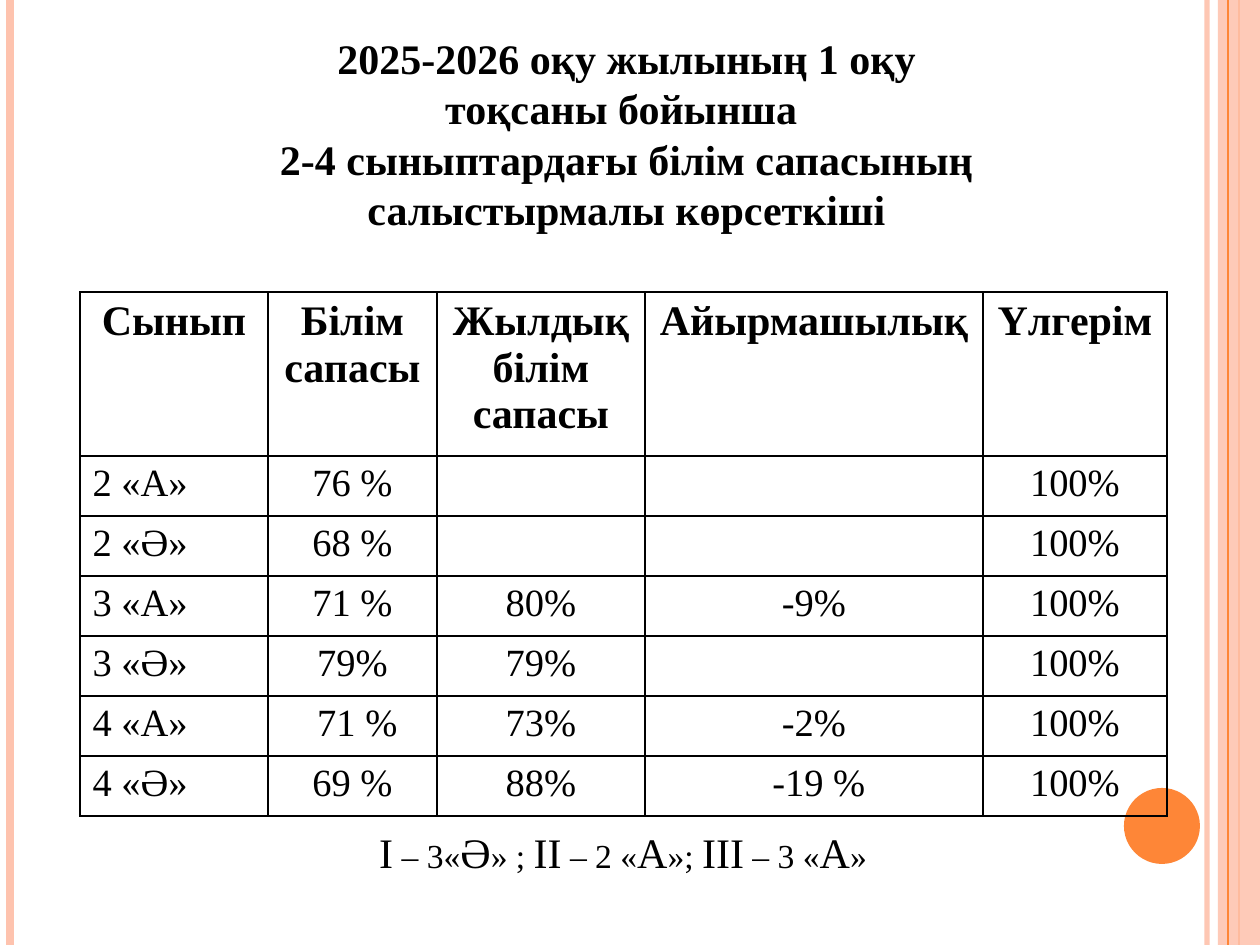
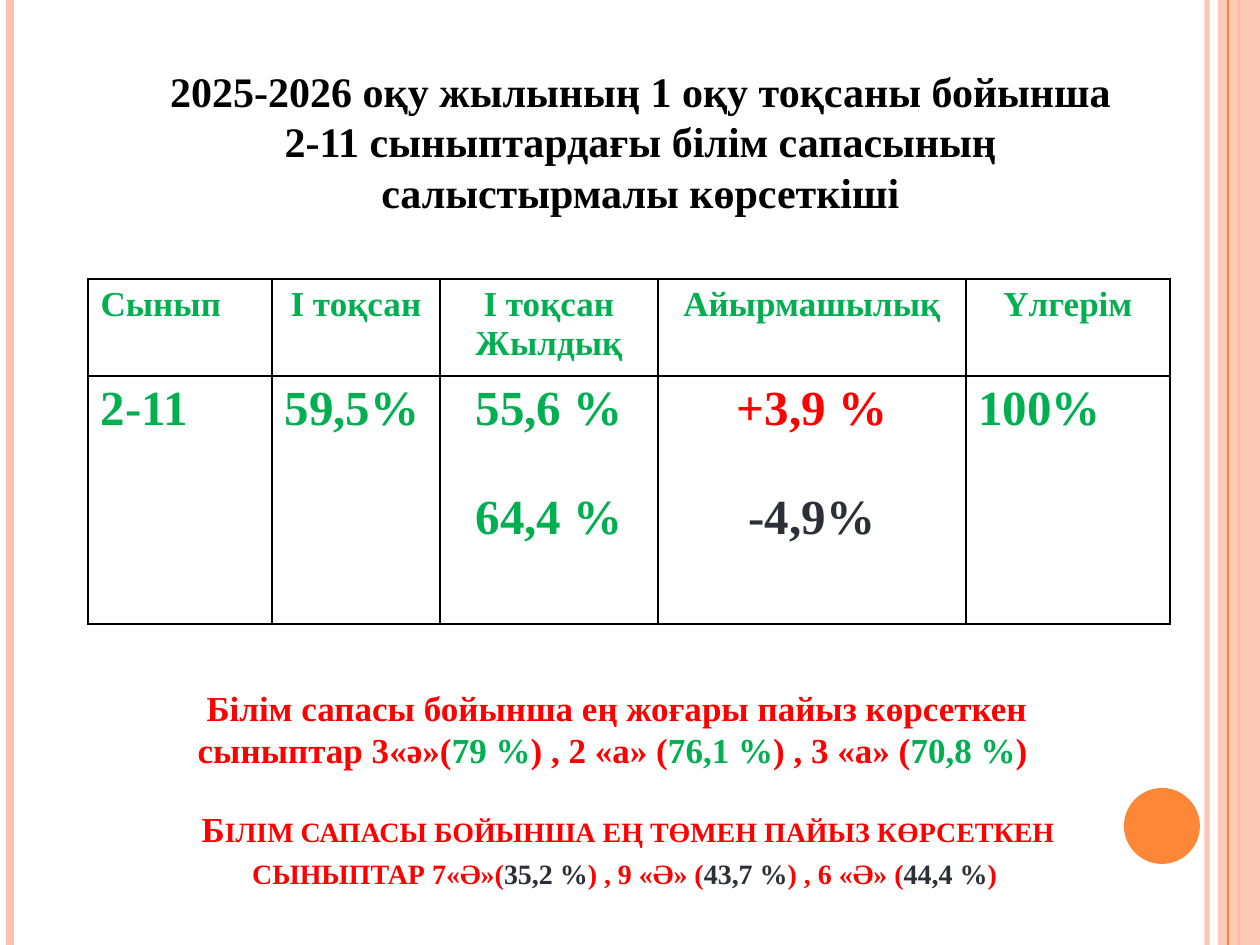
"""Build two slides comparing the quality of learning by class."""
from itertools import cycle

from pptx import Presentation, util as u
from pptx.dml.color import RGBColor
from pptx.enum import shapes, text
from pptx.oxml import parse_xml
from pptx.oxml.ns import nsdecls

EMU_PER_PX = 914400 / 126
PAGE_WIDTH, PAGE_HEIGHT = 1260, 945
FONT = "Times New Roman"
LEADING = 1.2
COLOURS = {
    "black": "000000",
    "green": "00B050",
    "red": "FF0000",
    "slate": "2B2F36",
    "peach": "FEC3AE",
    "orange": "FE8637",
}
BAND_LINES = [
    (1207, "peach", 3, 93),
    (10, "peach", 4.5, 100),
    (1239, "orange", 1.5, 100),
]
LEFT, CENTER = text.PP_ALIGN.LEFT, text.PP_ALIGN.CENTER


def px(*lengths):
    """Turn pixel lengths into a list of EMU."""
    return [u.Emu(round(length * EMU_PER_PX)) for length in lengths]


def rgb(name):
    """Look up a colour by name."""
    return RGBColor.from_string(COLOURS[name])


def apply(target, values):
    """Set every attribute in a dict of format values."""
    for name, value in values.items():
        setattr(target, name, value)


def set_opacity(shape, percent):
    """Make the explicit colours of a shape partly transparent."""
    for colour in shape.element.xpath(".//a:srgbClr"):
        colour.append(parse_xml(f'<a:alpha {nsdecls("a")} val="{percent * 1000}"/>'))


def add_band_line(page, x, colour, width, opacity):
    """Draw a vertical line over the full height of the page."""
    line = page.shapes.add_connector(
        shapes.MSO_CONNECTOR.STRAIGHT, *px(x, 0, x, PAGE_HEIGHT))
    line.line.width = u.Pt(width)
    line.line.color.rgb = rgb(colour)
    line.element.spPr.append(parse_xml(f'<a:effectLst {nsdecls("a")}/>'))
    if opacity < 100:
        set_opacity(line, opacity)


def add_plain_shape(page, kind, place, colour):
    """Add a filled shape without outline or shadow."""
    shape = page.shapes.add_shape(kind, *px(*place))
    shape.shadow.inherit = False
    shape.fill.solid()
    shape.fill.fore_color.rgb = rgb(colour)
    shape.line.fill.background()
    return shape


def add_decoration(page):
    """Draw the side bands and the disc shared by all pages."""
    for band in BAND_LINES:
        add_band_line(page, *band)
    strip = add_plain_shape(
        page, shapes.MSO_SHAPE.RECTANGLE, (1218, 0, 42, PAGE_HEIGHT), "peach")
    set_opacity(strip, 87)
    add_band_line(page, 1228, "orange", 0.75, 100)
    add_plain_shape(page, shapes.MSO_SHAPE.OVAL, (1124, 788, 76, 76), "orange")


def write(frame, paras, size, bold=False, align=CENTER, leading=None, gap=0,
          small_caps=False):
    """Fill a text frame with paragraphs made of (words, colour) spans."""
    for index, spans in enumerate(paras):
        para = frame.paragraphs[0] if index == 0 else frame.add_paragraph()
        apply(para, {"alignment": align, "space_after": u.Pt(0),
                     "space_before": u.Pt(gap if index else 0)})
        if leading:
            para.line_spacing = u.Pt(size * leading)
        for words, colour in spans:
            span = para.add_run()
            span.text = words
            apply(span.font, {"name": FONT, "size": u.Pt(size), "bold": bold})
            span.font.color.rgb = rgb(colour)
            if small_caps:
                span.font._element.set("cap", "small")


def format_box(box, anchor):
    """Give a text box its wrapping and anchor."""
    apply(box.text_frame, {"word_wrap": True, "vertical_anchor": anchor,
                           "auto_size": text.MSO_AUTO_SIZE.NONE})


def add_page(deck, place, title_lines):
    """Add a decorated page with its title."""
    page = deck.slides.add_slide(deck.slide_layouts[5])
    add_decoration(page)
    title = page.shapes.title
    apply(title, dict(zip(("left", "top", "width", "height"), px(*place))))
    format_box(title, text.MSO_ANCHOR.TOP)
    write(title.text_frame, [[(line, "black")] for line in title_lines],
          24, bold=True, leading=LEADING)
    return page


def add_note(page, place, spans, size, anchor=text.MSO_ANCHOR.BOTTOM, **style):
    """Add a one-paragraph note below the table."""
    box = page.shapes.add_textbox(*px(*place))
    format_box(box, anchor)
    write(box.text_frame, [spans], size, leading=LEADING, **style)


def alternate(pieces, highlight):
    """Colour pieces of a sentence in red and a highlight in turn."""
    return list(zip(pieces, cycle(("red", highlight))))


def add_grid(page, corner, widths, heights):
    """Add an unfilled table with thin black borders."""
    table = page.shapes.add_table(
        len(heights), len(widths), *px(*corner, sum(widths), sum(heights))).table
    apply(table, {"first_row": False, "horz_banding": False})
    for column, width in zip(table.columns, px(*widths)):
        column.width = width
    for row, height in zip(table.rows, px(*heights)):
        row.height = height
    for cell in table.iter_cells():
        properties = cell._tc.get_or_add_tcPr()
        for side in "LRTB":
            properties.append(parse_xml(
                f'<a:ln{side} {nsdecls("a")} w="12700"><a:solidFill>'
                f'<a:srgbClr val="{COLOURS["black"]}"/></a:solidFill></a:ln{side}>'))
        cell.fill.background()
    return table


def build_primary_page(deck):
    """Build the page for classes 2 to 4."""
    page = add_page(deck, (263, 26, 727, 217), [
        "2025-2026 оқу жылының 1 оқу тоқсаны бойынша ",
        "2-4 сыныптардағы білім сапасының салыстырмалы көрсеткіші"])
    headers = ["Сынып", "Білім сапасы", "Жылдық білім сапасы",
               "Айырмашылық", "Үлгерім"]
    results = [
        ("2 «А»", "76 %", "", ""),
        ("2 «Ә»", "68 %", "", ""),
        ("3 «А»", "71 %", "80%", "-9%"),
        ("3 «Ә»", "79%", "79%", ""),
        ("4 «А»", " 71 %", "73%", "-2%"),
        ("4 «Ә»", "69 %", "88%", " -19 %"),
    ]
    table = add_grid(page, (80, 292), [188, 169, 208, 338, 184],
                     [164] + [60] * len(results))
    for column, header in enumerate(headers):
        write(table.cell(0, column).text_frame, [[(header, "black")]], 24, bold=True)
    for row, result in enumerate(results, 1):
        for column, value in enumerate((*result, "100%")):
            if value:
                write(table.cell(row, column).text_frame, [[(value, "black")]], 22,
                      align=CENTER if column else LEFT)
    add_note(page, (103, 820, 1040, 63),
             [("I – 3«Ә» ; II – 2 «А»; ІII – 3 «А»", "black")], 24, small_caps=True)


def build_school_page(deck):
    """Build the page for classes 2 to 11."""
    page = add_page(deck, (154, 59, 973, 165), [
        "2025-2026 оқу жылының 1 оқу тоқсаны бойынша ",
        "2-11 сыныптардағы білім сапасының салыстырмалы көрсеткіші"])
    columns = [
        (["Сынып"], LEFT, [("2-11", "green")], LEFT),
        (["І тоқсан"], CENTER, [("59,5%", "green")], LEFT),
        (["І тоқсан", "Жылдық"], CENTER,
         [("55,6 %", "green"), ("64,4 %", "green")], CENTER),
        (["Айырмашылық"], CENTER,
         [("+3,9 %", "red"), ("-4,9%", "slate")], CENTER),
        (["Үлгерім"], CENTER, [("100%", "green")], LEFT),
    ]
    table = add_grid(page, (88, 279), [184, 168, 218, 308, 204], [97, 248])
    for index, (header, header_align, values, value_align) in enumerate(columns):
        write(table.cell(0, index).text_frame, [[(line, "green")] for line in header],
              20, bold=True, align=header_align)
        write(table.cell(1, index).text_frame, [[value] for value in values],
              28, bold=True, align=value_align, gap=31)
    lowest = ["Білім сапасы бойынша ең төмен пайыз көрсеткен сыныптар 7«ә»(",
              "35,2 %", ") , 9 «ә» (", "43,7 %", ") , 6 «ә» (", "44,4 %", ") "]
    highest = ["Білім сапасы бойынша ең жоғары пайыз көрсеткен сыныптар 3«ә»(",
               "79 %", ") , 2 «а» (", "76,1 %", ") , 3 «а» (", "70,8 %", ") "]
    add_note(page, (108, 835, 1040, 63), alternate(lowest, "slate"), 20,
             bold=True, small_caps=True)
    add_note(page, (108, 680, 1018, 97), alternate(highest, "green"), 20,
             anchor=text.MSO_ANCHOR.TOP, bold=True)


def main():
    """Build and save the deck."""
    deck = Presentation()
    deck.slide_width, deck.slide_height = px(PAGE_WIDTH, PAGE_HEIGHT)
    build_primary_page(deck)
    build_school_page(deck)
    deck.save("out.pptx")


if __name__ == "__main__":
    main()
